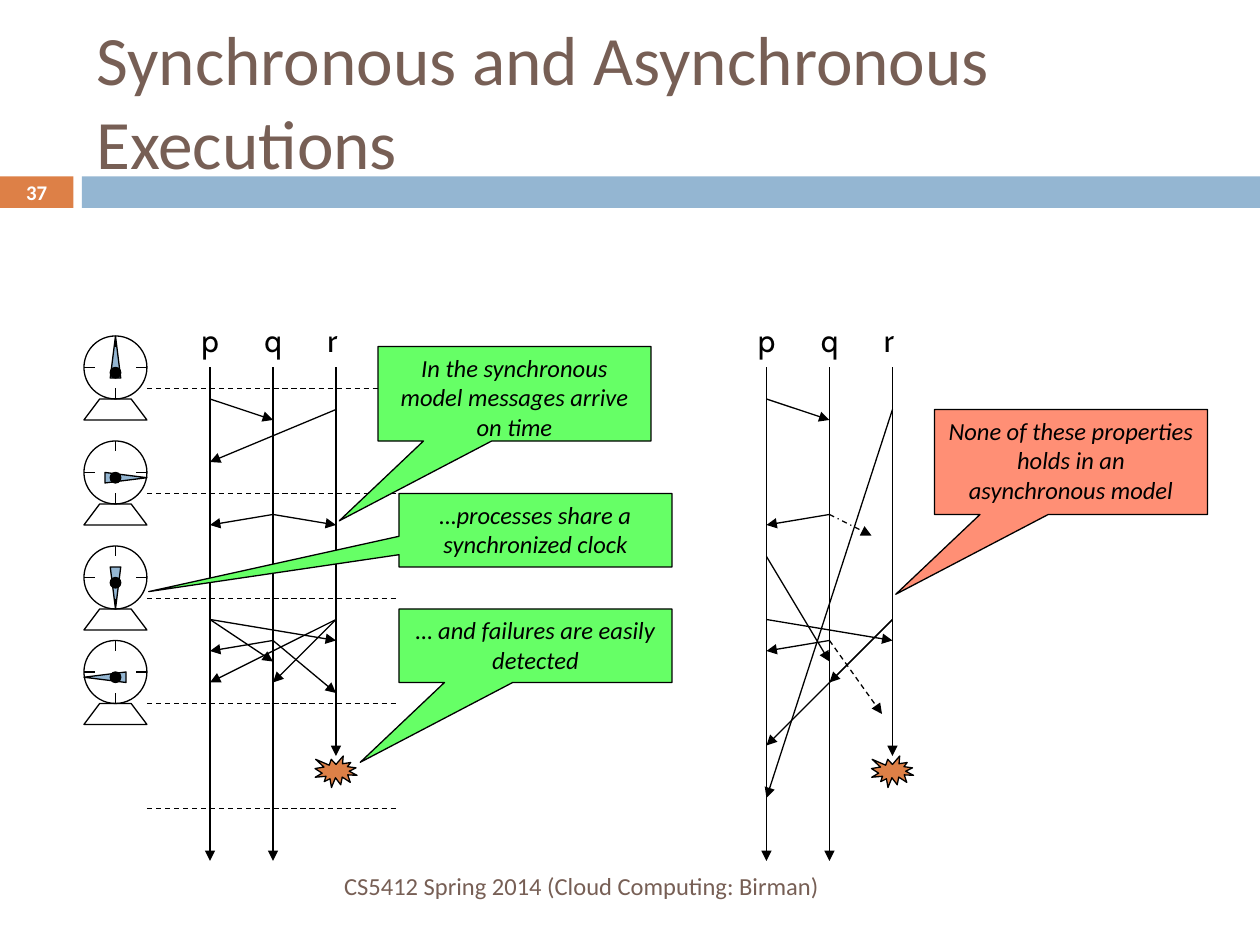
import pptx
import pptx.dml.color
import pptx.enum.dml
import pptx.enum.shapes
import pptx.enum.text
import pptx.oxml.ns
import pptx.util
from lxml import etree

SHAPE = pptx.enum.shapes.MSO_SHAPE
DASH = pptx.enum.dml.MSO_LINE
ALIGN = pptx.enum.text.PP_ALIGN
ANCHOR = pptx.enum.text.MSO_ANCHOR

COLORS = {
    "ink": "000000", "white": "FFFFFF", "brown": "775F55", "blue": "94B6D2",
    "orange": "DD8047", "green": "66FF66", "salmon": "FF8F75",
}

# Each message: sender x and y, receiver x and y, dash; x counts from line p
SYNC = [
    (0, 38, 6, 40, None), (12, 39, 0, 44, None),
    (6, 49, 0, 50, None), (6, 49, 12, 50, None),
    (0, 59, 12, 61, None), (12, 59, 0, 65, None),
    (6, 61, 0, 62, None), (0, 59, 6, 63, None),
    (6, 61, 12, 66, None), (12, 59, 6, 65, None),
]
ASYNC = [
    (0, 38, 6, 40, None), (12, 39, 0, 76, None),
    (6, 49, 0, 50, None), (6, 49, 10, 51, DASH.DASH_DOT),
    (0, 59, 12, 61, None), (12, 59, 0, 71, None),
    (6, 61, 0, 62, None), (0, 53, 6, 63, None),
    (6, 61, 11, 68, DASH.DASH), (12, 59, 6, 65, None),
]

# Each clock: top, turn of the hand, centre of the hand from the dial's corner
CLOCKS = [(32, 0, 3, 2), (42, 90, 4, 3.5), (52, 180, 3, 4), (61, 270, 2, 3.5)]

# Each callout: box, pointer, fill, text
CALLS = [
    ((38, 47, 26, 7), (-1.417, 0.836), "green",
     "…processes share a synchronized clock"),
    ((36, 33, 26, 9), (-0.642, 1.345), "green",
     "In the synchronous model messages arrive on time"),
    ((38, 58, 26, 7), (-0.642, 1.586), "green",
     "… and failures are easily detected"),
    ((89, 39, 26, 10), (-0.642, 1.26), "salmon",
     "None of these properties holds in an asynchronous model"),
]


def grid(*steps):
    """Lengths on a grid of twelve steps to the inch."""
    return [pptx.util.Cm(step * 2.54 / 12) for step in steps]


def color(name):
    return pptx.dml.color.RGBColor.from_string(COLORS[name])


def paint(shape, fill=None, line="ink"):
    shape.shadow.inherit = False
    if fill:
        shape.fill.solid()
        shape.fill.fore_color.rgb = color(fill)
    else:
        shape.fill.background()
    if line:
        shape.line.color.rgb = color(line)
        shape.line.width = pptx.util.Pt(0.75)
    else:
        shape.line.fill.background()
    return shape


def add_shape(slide, kind, box, fill=None, line="ink"):
    return paint(slide.shapes.add_shape(kind, *grid(*box)), fill, line)


def add_line(slide, x1, y1, x2, y2, dash=None, arrow=False):
    link = slide.shapes.add_connector(
        pptx.enum.shapes.MSO_CONNECTOR.STRAIGHT, *grid(x1, y1, x2, y2))
    link.line.color.rgb = color("ink")
    link.line.width = pptx.util.Pt(0.75)
    if dash:
        link.line.dash_style = dash
    qn = pptx.oxml.ns.qn
    if arrow:
        etree.SubElement(link.line._get_or_add_ln(), qn("a:tailEnd"),
                         type="triangle")
    etree.SubElement(link._element.spPr, qn("a:effectLst"))


def write(shape, text, size, ink, align=ALIGN.LEFT, anchor=ANCHOR.TOP,
          font="Calibri", bold=False, italic=False):
    frame = shape.text_frame
    frame.word_wrap = True
    frame.vertical_anchor = anchor
    para = frame.paragraphs[0]
    para.alignment = align
    run = para.add_run()
    run.text = text
    run.font.name = font
    run.font.size = pptx.util.Pt(size)
    run.font.bold = bold
    run.font.italic = italic
    run.font.color.rgb = color(ink)


def add_text(slide, box, *args, **style):
    write(slide.shapes.add_textbox(*grid(*box)), *args, **style)


def add_clock(slide, top, turn, dx, dy):
    left = 8
    add_shape(slide, SHAPE.OVAL, (left, top, 6, 6))
    # Stand
    pen = slide.shapes.build_freeform(*grid(left, top + 8), scale=1.0)
    pen.add_line_segments([
        grid(left + 1.5, top + 6), grid(left + 4.5, top + 6),
        grid(left + 6, top + 8)], close=True)
    paint(pen.convert_to_shape())
    # Hand and hub
    hand = add_shape(slide, SHAPE.ISOSCELES_TRIANGLE,
                     (left + dx - 0.5, top + dy - 2, 1, 4), "blue")
    hand.rotation = turn
    add_shape(slide, SHAPE.OVAL, (left + 2.5, top + 3, 1, 1), "ink")
    # Ticks
    for start in (0, 5):
        add_line(slide, left + start, top + 3, left + start + 1, top + 3)
        add_line(slide, left + 3, top + start, left + 3, top + start + 1)


def add_run(slide, left, sends):
    """Three process lines, their messages and the crash of r."""
    for name, step, end in (("p", 0, 82), ("q", 6, 82), ("r", 12, 72)):
        x = left + step
        add_line(slide, x, 35, x, end, arrow=True)
        add_text(slide, (x - 2, 30, 4, 4.8), name, 18, "ink", font="Cabin")
    for x1, y1, x2, y2, dash in sends:
        add_line(slide, left + x1, y1, left + x2, y2, dash, arrow=True)
    add_shape(slide, SHAPE.EXPLOSION1, (left + 10, 72, 4, 3), "orange")


def add_call(slide, box, tip, fill, text):
    call = add_shape(slide, SHAPE.RECTANGULAR_CALLOUT, box, fill)
    call.adjustments[0], call.adjustments[1] = tip
    write(call, text, 14, "ink", ALIGN.CENTER, italic=True)


def main():
    deck = pptx.Presentation()
    deck.slide_width, deck.slide_height = grid(120, 90)
    slide = deck.slides.add_slide(deck.slide_layouts[6])

    # Heading and bars
    add_shape(slide, SHAPE.RECTANGLE, (0, 16.8, 7, 3), "orange", None)
    add_shape(slide, SHAPE.RECTANGLE, (7.8, 16.8, 112.2, 3), "blue", None)
    add_text(slide, (8, 3, 107, 13), "Synchronous and Asynchronous Executions",
             39.6, "brown", anchor=ANCHOR.MIDDLE)

    # Clock rounds, clocks and both executions
    for y in range(37, 78, 10):
        add_line(slide, 14, y, 38, y, DASH.DASH)
    add_run(slide, 20, SYNC)
    for clock in CLOCKS:
        add_clock(slide, *clock)
    add_run(slide, 73, ASYNC)

    # Remarks
    for call in CALLS:
        add_call(slide, *call)

    # Footer and page number
    add_text(slide, (8, 82, 71.2, 4.8),
             "CS5412 Spring 2014 (Cloud Computing: Birman)", 14, "brown",
             ALIGN.RIGHT, ANCHOR.MIDDLE)
    add_text(slide, (0, 16.7, 7, 3.2), "37", 11.9, "white", ALIGN.CENTER,
             ANCHOR.MIDDLE, bold=True)

    deck.save("out.pptx")


if __name__ == "__main__":
    main()
